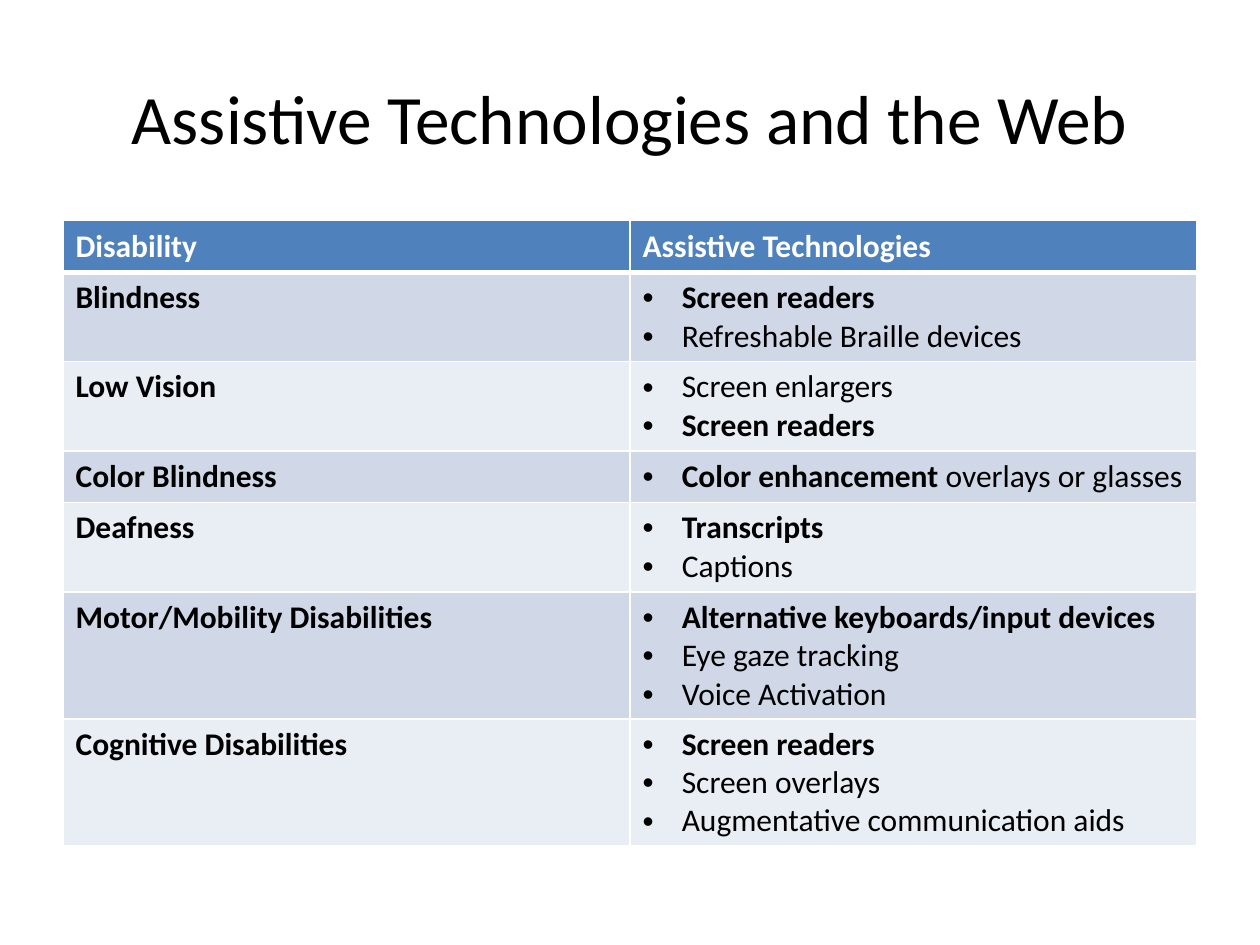
from dataclasses import dataclass

from lxml.etree import SubElement
from pptx import Presentation
from pptx.dml.color import RGBColor as Rgb
from pptx.enum.text import MSO_ANCHOR as Anchor, PP_ALIGN as Align
from pptx.oxml.ns import qn
from pptx.util import Cm, Pt


@dataclass(frozen=True)
class Theme:
    font: str = "Calibri"
    title: float = 39.6
    body: float = 18
    ink: str = "000000"
    paper: str = "FFFFFF"
    head: str = "4F81BD"
    bands: tuple = ("D0D8E8", "E9EDF4")
    thin: float = 1
    thick: float = 3


@dataclass(frozen=True)
class Item:
    """One bullet: a bold part, then a plain part."""
    bold: str = ""
    plain: str = ""


@dataclass(frozen=True)
class Row:
    need: str
    aids: tuple


THEME = Theme()
LINE, STEP, INDENT = Cm(1.04), Cm(0.76), Cm(0.79)
HEADS = ("Disability", "Assistive Technologies")
ROWS = (
    Row("Blindness", (Item("Screen readers"), Item(plain="Refreshable Braille devices"))),
    Row("Low Vision", (Item(plain="Screen enlargers"), Item("Screen readers"))),
    Row("Color Blindness", (Item("Color enhancement ", "overlays or glasses"),)),
    Row("Deafness", (Item("Transcripts"), Item(plain="Captions"))),
    Row("Motor/Mobility Disabilities", (
        Item("Alternative keyboards/input devices"),
        Item(plain="Eye gaze tracking"),
        Item(plain="Voice Activation"))),
    Row("Cognitive Disabilities", (
        Item("Screen readers"),
        Item(plain="Screen overlays"),
        Item(plain="Augmentative communication aids"))),
)


def write(para, text: str, *, size: float = THEME.body, color: str = THEME.ink,
          bold: bool = False) -> None:
    run = para.add_run()
    run.text = text
    font = run.font
    font.name, font.size, font.bold = THEME.font, Pt(size), bold
    font.color.rgb = Rgb.from_string(color)


def bullet(para) -> None:
    props = para._p.get_or_add_pPr()
    props.set("marL", str(INDENT))
    props.set("indent", str(-INDENT))
    SubElement(props, qn("a:buFont"), typeface="Arial")
    SubElement(props, qn("a:buChar"), char="•")


def paint(cell, fill: str, top: float = THEME.thin, base: float = THEME.thin) -> None:
    """Fill a cell and rule its four edges."""
    cell.fill.solid()
    cell.fill.fore_color.rgb = Rgb.from_string(fill)
    props = cell._tc.get_or_add_tcPr()
    edges = {"L": THEME.thin, "R": THEME.thin, "T": top, "B": base}
    for spot, (side, width) in enumerate(edges.items()):
        line = SubElement(props, qn(f"a:ln{side}"), w=str(Pt(width)))
        ink = SubElement(line, qn("a:solidFill"))
        SubElement(ink, qn("a:srgbClr"), val=THEME.paper)
        props.insert(spot, line)


def listing(cell, items: tuple) -> None:
    frame = cell.text_frame
    for spot, item in enumerate(items):
        para = frame.add_paragraph() if spot else frame.paragraphs[0]
        bullet(para)
        if item.bold:
            write(para, item.bold, bold=True)
        if item.plain:
            write(para, item.plain)


def heading(slide, text: str) -> None:
    box = slide.shapes.add_textbox(Cm(1.27), Cm(0.76), Cm(22.86), Cm(3.18))
    frame = box.text_frame
    frame.word_wrap = True
    frame.vertical_anchor = Anchor.MIDDLE
    para = frame.paragraphs[0]
    para.alignment = Align.CENTER
    write(para, text, size=THEME.title)


def grid(slide, rows: tuple) -> None:
    tall = [LINE] + [LINE + STEP * (len(row.aids) - 1) for row in rows]
    table = slide.shapes.add_table(len(tall), len(HEADS), Cm(1.27), Cm(4.45),
                                   Cm(22.86), sum(tall)).table
    for line, height in zip(table.rows, tall):
        line.height = height
    for col, text in enumerate(HEADS):
        cell = table.cell(0, col)
        write(cell.text_frame.paragraphs[0], text, color=THEME.paper, bold=True)
        paint(cell, THEME.head, base=THEME.thick)
    for spot, row in enumerate(rows, 1):
        name, aids = table.cell(spot, 0), table.cell(spot, 1)
        write(name.text_frame.paragraphs[0], row.need, bold=True)
        listing(aids, row.aids)
        for cell in (name, aids):
            paint(cell, THEME.bands[(spot - 1) % 2],
                  top=THEME.thick if spot == 1 else THEME.thin)


def main() -> None:
    deck = Presentation()
    deck.slide_width, deck.slide_height = Cm(25.4), Cm(19.05)
    slide = deck.slides.add_slide(deck.slide_layouts[6])
    heading(slide, "Assistive Technologies and the Web")
    grid(slide, ROWS)
    deck.save("out.pptx")


if __name__ == "__main__":
    main()
